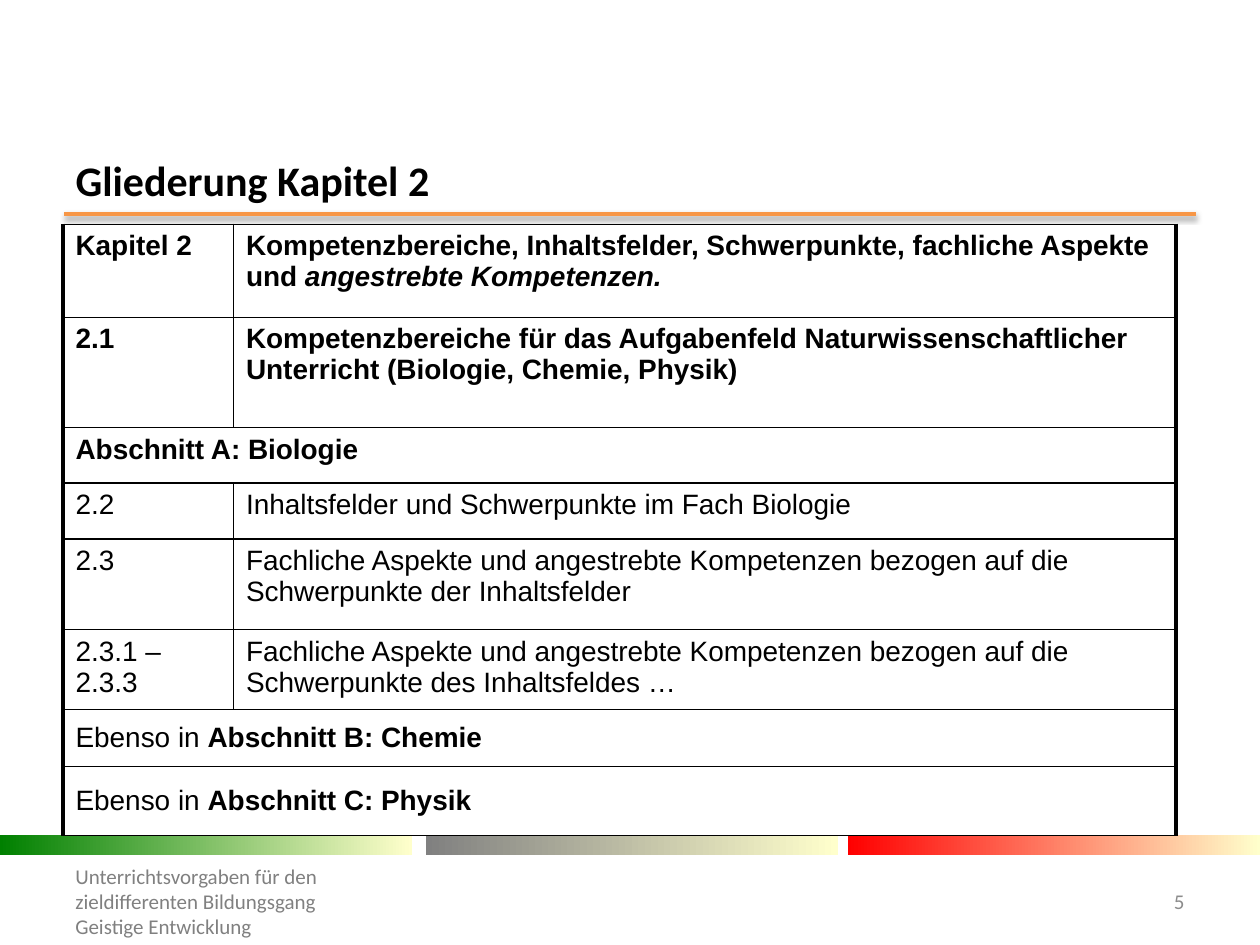
from dataclasses import dataclass

from lxml import etree
from pptx import Presentation
from pptx.dml.color import RGBColor
from pptx.enum import shapes, text
from pptx.oxml import ns, parse_xml
from pptx.util import Pt

BLACK = "000000"
PALE = "FFFFCC"


@dataclass
class Bar:
    left: float
    color: str


@dataclass
class Part:
    wording: str
    bold: bool = False
    italic: bool = False


@dataclass
class Row:
    height: float
    cells: list[list[Part]]
    middle: bool = False


BARS = [Bar(0, "008000"), Bar(243.36, "808080"), Bar(484.56, "FF0000")]

ROWS = [
    Row(53.2, [[Part("Kapitel 2", True)],
               [Part("Kompetenzbereiche, Inhaltsfelder, Schwerpunkte, fachliche Aspekte und ", True),
                Part("angestrebte Kompetenzen.", True, True)]]),
    Row(63, [[Part("2.1", True)],
             [Part("Kompetenzbereiche für das Aufgabenfeld Naturwissenschaftlicher "
                   "Unterricht (Biologie, Chemie, Physik)", True)]]),
    Row(31.8, [[Part("Abschnitt A: Biologie", True)]]),
    Row(31.8, [[Part("2.2")], [Part("Inhaltsfelder und Schwerpunkte im Fach Biologie")]]),
    Row(52, [[Part("2.3")],
             [Part("Fachliche Aspekte und angestrebte Kompetenzen bezogen auf die "
                   "Schwerpunkte der Inhaltsfelder")]]),
    Row(44.6, [[Part("2.3.1 – 2.3.3")],
               [Part("Fachliche Aspekte und angestrebte Kompetenzen bezogen auf die "
                     "Schwerpunkte des Inhaltsfeldes …")]]),
    Row(32.4, [[Part("Ebenso in "), Part("Abschnitt B: Chemie", True)]], True),
    Row(39.6, [[Part("Ebenso in "), Part("Abschnitt C: Physik", True)]], True),
]


def rgb(value: str) -> RGBColor:
    return RGBColor.from_string(value)


def style(font, name: str, size: float, color: str, bold: bool = False, italic: bool = False) -> None:
    font.name, font.size = name, Pt(size)
    font.bold, font.italic = bold, italic
    font.color.rgb = rgb(color)


def add_rule(s) -> None:
    line = s.shapes.add_connector(
        shapes.MSO_CONNECTOR.STRAIGHT, Pt(36.72), Pt(122.4), Pt(683.28), Pt(122.4))
    line.line.color.rgb = rgb("F79646")
    line.line.width = Pt(2)
    line._element.spPr.append(parse_xml(
        f'<a:effectLst {ns.nsdecls("a")}>'
        f'<a:outerShdw blurRad="{Pt(3.1)}" dist="{Pt(1.6)}" dir="5400000" rotWithShape="0">'
        f'<a:srgbClr val="{BLACK}"><a:alpha val="38000"/></a:srgbClr>'
        '</a:outerShdw></a:effectLst>'))


def add_bar(s, bar: Bar) -> None:
    sp = s.shapes.add_shape(
        shapes.MSO_SHAPE.RECTANGLE, Pt(bar.left), Pt(477.36), Pt(235.44), Pt(11.52))
    sp.shadow.inherit = False
    sp.line.fill.background()
    sp.fill.gradient()
    sp.fill.gradient_angle = 0
    for stop, color in zip(sp.fill.gradient_stops, (bar.color, PALE)):
        stop.color.rgb = rgb(color)


def add_label(s, left: float, width: float, wording: str, color: str, align) -> None:
    sp = s.shapes.add_textbox(Pt(left), Pt(500.4), Pt(width), Pt(28.8))
    tf = sp.text_frame
    tf.word_wrap = True
    tf.vertical_anchor = text.MSO_ANCHOR.MIDDLE
    tf.text = wording
    for p in tf.paragraphs:
        p.alignment = align
        for r in p.runs:
            style(r.font, "Calibri", 12, color)


def set_borders(cell, left: float, right: float) -> None:
    tcPr = cell._tc.get_or_add_tcPr()
    for side, width in (("L", left), ("R", right), ("T", 1), ("B", 1)):
        ln = etree.SubElement(tcPr, ns.qn(f"a:ln{side}"), w=str(Pt(width)))
        fill = etree.SubElement(ln, ns.qn("a:solidFill"))
        etree.SubElement(fill, ns.qn("a:srgbClr"), val=BLACK)


def fill_cell(cell, parts: list[Part]) -> None:
    p = cell.text_frame.paragraphs[0]
    for part in parts:
        r = p.add_run()
        r.text = part.wording
        style(r.font, "Arial", 16, BLACK, part.bold, part.italic)


def add_outline_table(s, rows: list[Row]) -> None:
    widths = (97.4, 538.6)
    table = s.shapes.add_table(
        len(rows), len(widths), Pt(36), Pt(128.16), Pt(sum(widths)),
        Pt(sum(row.height for row in rows))).table
    table.first_row = table.horz_banding = False
    for column, width in zip(table.columns, widths):
        column.width = Pt(width)
    for i, row in enumerate(rows):
        table.rows[i].height = Pt(row.height)
        merged = len(row.cells) == 1
        if merged:
            table.cell(i, 0).merge(table.cell(i, 1))
        for j in range(len(widths)):
            cell = table.cell(i, j)
            set_borders(cell, 1 if j else 2.25, 2.25 if j or merged else 1)
            cell.fill.background()
            if row.middle:
                cell.vertical_anchor = text.MSO_ANCHOR.MIDDLE
        for j, parts in enumerate(row.cells):
            fill_cell(table.cell(i, j), parts)


def add_title(s, wording: str) -> None:
    title = s.shapes.title
    title.left, title.top, title.width, title.height = Pt(36), Pt(88.56), Pt(648), Pt(28.08)
    tf = title.text_frame
    tf.text = wording
    tf.auto_size = text.MSO_AUTO_SIZE.NONE
    tf.vertical_anchor = text.MSO_ANCHOR.MIDDLE
    p = tf.paragraphs[0]
    p.alignment = text.PP_ALIGN.LEFT
    style(p.runs[0].font, "Calibri", 24, BLACK, True)


def main() -> None:
    prs = Presentation()
    prs.slide_width, prs.slide_height = Pt(720), Pt(540)
    s = prs.slides.add_slide(prs.slide_layouts[5])
    add_rule(s)
    for bar in BARS:
        add_bar(s, bar)
    add_title(s, "Gliederung Kapitel 2")
    add_label(s, 36, 414.72,
              "Unterrichtsvorgaben für den\nzieldifferenten Bildungsgang\nGeistige Entwicklung",
              "808080", text.PP_ALIGN.LEFT)
    add_label(s, 637.92, 46.08, "5", "8C8C8C", text.PP_ALIGN.RIGHT)
    add_outline_table(s, ROWS)
    prs.save("out.pptx")


if __name__ == "__main__":
    main()
